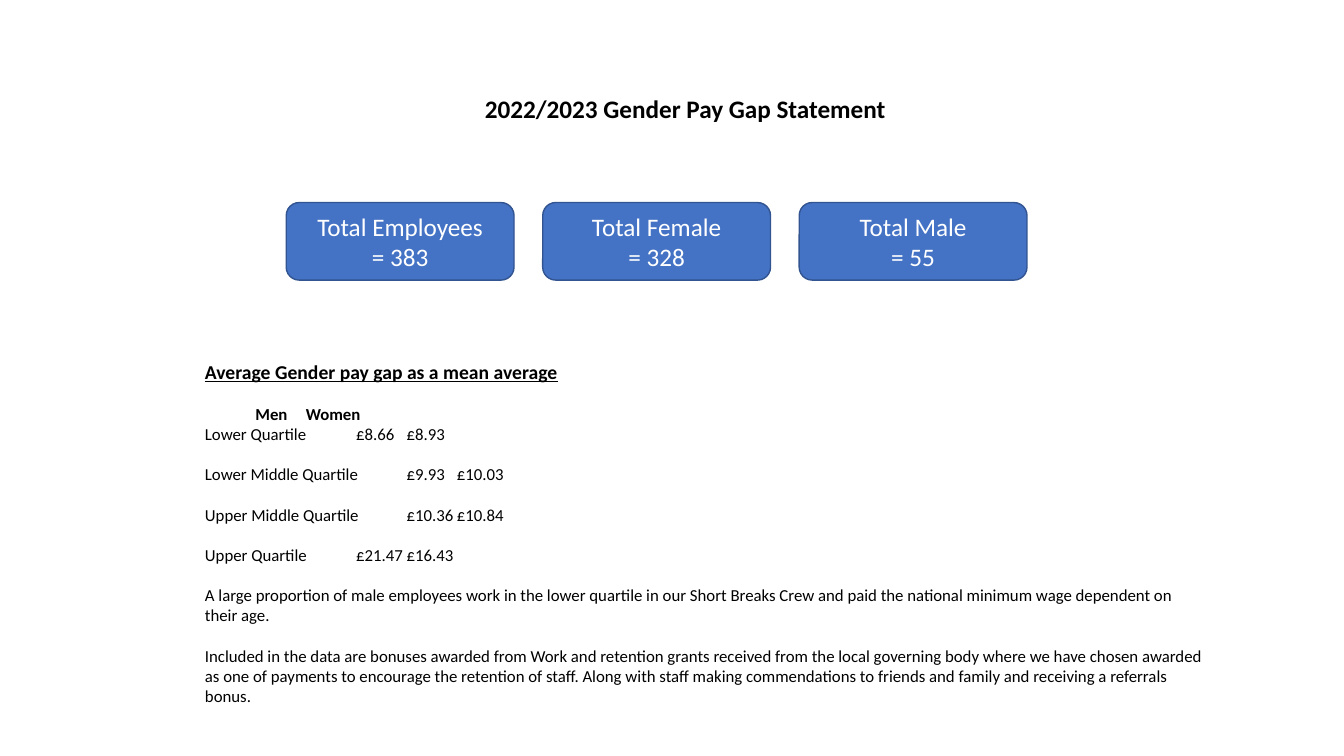
from typing import NamedTuple

from lxml.etree import SubElement
from pptx import Presentation
from pptx.dml.color import RGBColor
from pptx.enum.shapes import MSO_SHAPE as Preset
from pptx.enum.text import MSO_ANCHOR as Anchor, MSO_AUTO_SIZE as AutoSize, PP_ALIGN as Align
from pptx.oxml.ns import qn
from pptx.slide import Slide
from pptx.text.text import Font, _Paragraph as Paragraph
from pptx.util import Pt

BLACK, WHITE, BLUE, DARK_BLUE = "000000", "FFFFFF", "4472C4", "325491"
CARD_LEFT, CARD_TOP, CARD_WIDTH, CARD_HEIGHT, CARD_PITCH = 204.5, 144.7, 162.7, 55.4, 183.2
LINE_GAP = 14.4
COLUMN_STOPS = (216, 288)


class Card(NamedTuple):
    label: str
    count: int


class Line(NamedTuple):
    text: str
    gap: float = LINE_GAP
    size: float = 12
    bold: bool = False
    underline: bool = False


class Quartile(NamedTuple):
    name: str
    men: str
    women: str


CARDS = [Card("Total Employees", 383), Card("Total Female", 328), Card("Total Male", 55)]
QUARTILES = [
    Quartile("Lower Quartile", "£8.66", "£8.93"),
    Quartile("Lower Middle Quartile", "£9.93", "£10.03"),
    Quartile("Upper Middle Quartile", "£10.36", "£10.84"),
    Quartile("Upper Quartile", "£21.47", "£16.43"),
]
LINES = [
    Line("Average Gender pay gap as a mean average", 0, 14, True, True),
    Line("\tMen\tWomen", bold=True),
    *(Line("\t".join(quartile), LINE_GAP if row else 0) for row, quartile in enumerate(QUARTILES)),
    Line("A large proportion of male employees work in the lower quartile in our Short Breaks Crew "
         "and paid the national minimum wage dependent on their age."),
    Line("Included in the data are bonuses awarded from Work and retention grants received from the "
         "local governing body where we have chosen awarded as one of payments to encourage the "
         "retention of staff. Along with staff making commendations to friends and family and "
         "receiving a referrals bonus."),
]


def color(code: str) -> RGBColor:
    return RGBColor.from_string(code)


def style(font: Font, size: float, code: str, bold: bool = False) -> None:
    font.name = "Calibri"
    font.size = Pt(size)
    font.bold = bold
    font.color.rgb = color(code)


def place(shape, left: float, top: float, width: float, height: float) -> None:
    shape.left, shape.top, shape.width, shape.height = map(Pt, (left, top, width, height))


def set_columns(para: Paragraph) -> None:
    """Remove the bullet and indent, and set the tab stops of the pay columns."""
    properties = para._p.get_or_add_pPr()
    properties.set("marL", "0")
    properties.set("indent", "0")
    SubElement(properties, qn("a:buNone"))
    stops = SubElement(properties, qn("a:tabLst"))
    for stop in COLUMN_STOPS:
        SubElement(stops, qn("a:tab"), pos=str(Pt(stop)), algn="l")


def add_title(page: Slide) -> None:
    title = page.shapes.title
    place(title, 129.6, 41, 720, 51)
    frame = title.text_frame
    frame.text = "2022/2023 Gender Pay Gap Statement"
    frame.auto_size = AutoSize.NONE
    frame.vertical_anchor = Anchor.BOTTOM
    para = frame.paragraphs[0]
    para.alignment = Align.CENTER
    para.line_spacing = 0.9
    style(para.runs[0].font, 18, BLACK, bold=True)


def add_card(page: Slide, card: Card, left: float) -> None:
    box = page.shapes.add_shape(Preset.ROUNDED_RECTANGLE, Pt(left), Pt(CARD_TOP),
                                Pt(CARD_WIDTH), Pt(CARD_HEIGHT))
    box.shadow.inherit = False
    box.fill.solid()
    box.fill.fore_color.rgb = color(BLUE)
    box.line.color.rgb = color(DARK_BLUE)
    box.line.width = Pt(1)
    frame = box.text_frame
    frame.text = f"{card.label}\n= {card.count}"
    frame.vertical_anchor = Anchor.MIDDLE
    for para in frame.paragraphs:
        para.alignment = Align.CENTER
        style(para.runs[0].font, 18, WHITE)


def add_body(page: Slide) -> None:
    body = page.placeholders[1]
    place(body, 139.2, 253.4, 729.4, 272)
    frame = body.text_frame
    frame.text = "\n".join(line.text for line in LINES)
    frame.auto_size = AutoSize.NONE
    frame.vertical_anchor = Anchor.TOP
    for para, line in zip(frame.paragraphs, LINES):
        para.space_before = Pt(line.gap)
        set_columns(para)
        font = para.runs[0].font
        style(font, line.size, BLACK, line.bold)
        font.underline = line.underline


def main() -> None:
    deck = Presentation()
    deck.slide_width, deck.slide_height = Pt(960), Pt(540)
    page = deck.slides.add_slide(deck.slide_layouts[1])
    add_title(page)
    for index, card in enumerate(CARDS):
        add_card(page, card, CARD_LEFT + index * CARD_PITCH)
    add_body(page)
    deck.save("out.pptx")


if __name__ == "__main__":
    main()
